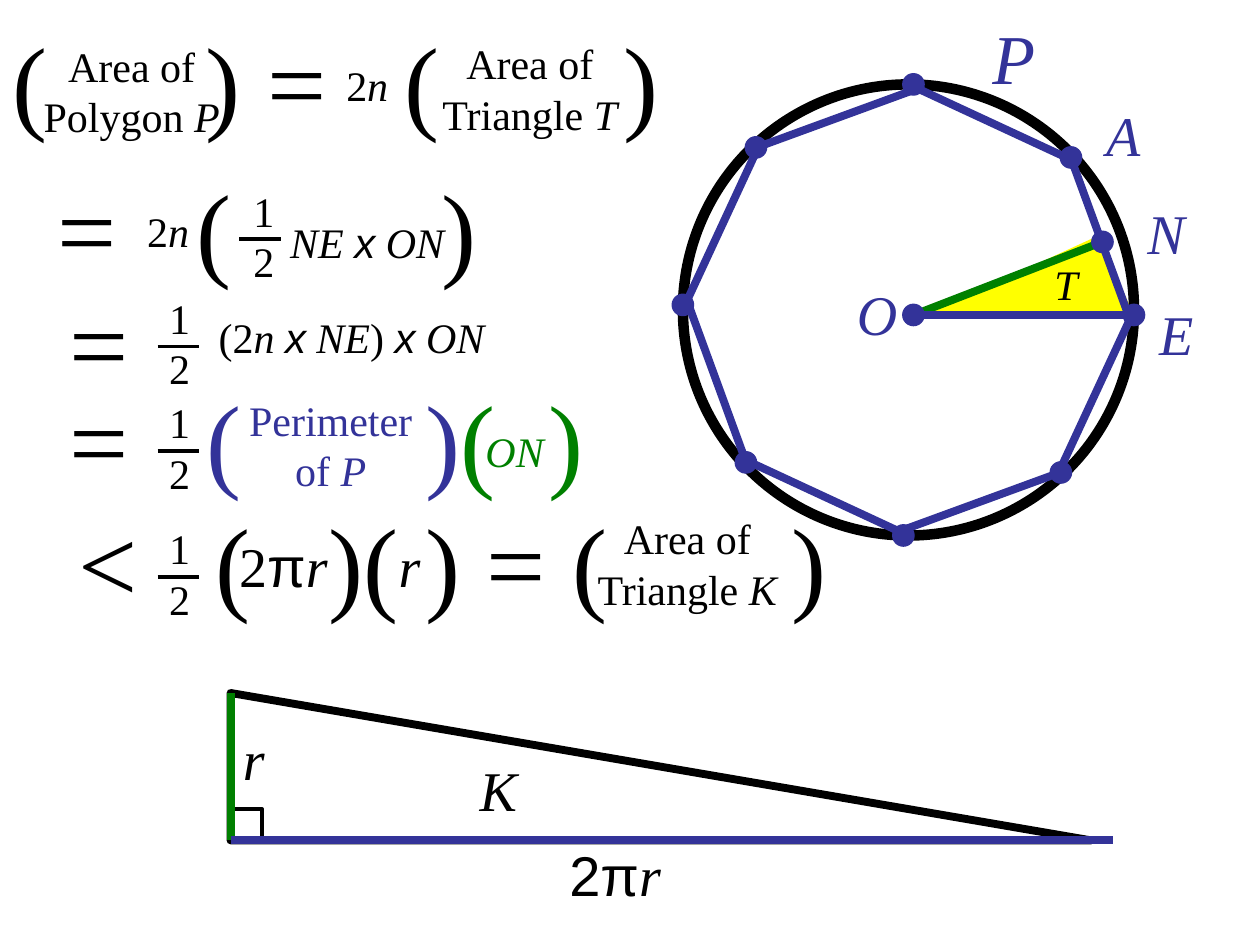
from dataclasses import dataclass

from lxml import etree
from pptx import Presentation
from pptx.dml.color import RGBColor
from pptx.enum.shapes import MSO_CONNECTOR, MSO_SHAPE
from pptx.enum.text import MSO_AUTO_SIZE, PP_ALIGN
from pptx.oxml.ns import qn
from pptx.util import Inches, Pt

STRAIGHT = MSO_CONNECTOR.STRAIGHT
OVAL, OCTAGON = MSO_SHAPE.OVAL, MSO_SHAPE.OCTAGON
RECTANGLE, RIGHT_TRIANGLE = MSO_SHAPE.RECTANGLE, MSO_SHAPE.RIGHT_TRIANGLE
LEFT, CENTER = PP_ALIGN.LEFT, PP_ALIGN.CENTER
FIT_SHAPE = MSO_AUTO_SIZE.SHAPE_TO_FIT_TEXT


@dataclass(frozen=True)
class Theme:
    black: RGBColor = RGBColor(0x00, 0x00, 0x00)
    blue: RGBColor = RGBColor(0x33, 0x33, 0x99)
    green: RGBColor = RGBColor(0x00, 0x80, 0x00)
    yellow: RGBColor = RGBColor(0xFF, 0xFF, 0x00)
    serif: str = "Times New Roman"
    sans: str = "Arial"
    body: int = 24
    label: int = 32
    heading: int = 40
    bracket: int = 60
    thin: float = 2.25
    thick: float = 4.5
    circle: float = 6


THEME = Theme()
ROMAN = {"name": THEME.serif, "italic": False}
ITALIC = {"name": THEME.serif, "italic": True}
SANS = {"name": THEME.sans, "italic": False}
SANS_ITALIC = {"name": THEME.sans, "italic": True}


class Page:
    """Holds the theme and the slide that the elements are added to."""

    def __init__(self, deck, theme):
        self.theme = theme
        self.slide = deck.slides.add_slide(deck.slide_layouts[6])

    def shape(self, kind, place, fill=None, line=None, width=0.75, turn=0):
        shape = self.slide.shapes.add_shape(kind, *map(Inches, place))
        shape.shadow.inherit = False
        shape.rotation = turn
        if fill is None:
            shape.fill.background()
        else:
            shape.fill.solid()
            shape.fill.fore_color.rgb = fill
        if line is None:
            shape.line.fill.background()
        else:
            shape.line.color.rgb = line
            shape.line.width = Pt(width)

    def dot(self, x, y, size=0.17):
        blue = self.theme.blue
        self.shape(OVAL, (x - size / 2, y - size / 2, size, size), blue, blue)

    def line(self, start, end, color, width):
        line = self.slide.shapes.add_connector(
            STRAIGHT, *map(Inches, (*start, *end)))
        line.line.color.rgb = color
        line.line.width = Pt(width)
        etree.SubElement(line._element.spPr, qn("a:effectLst"))

    def add_span(self, para, words, style, size, color):
        span = para.add_run()
        span.text = words
        for name, value in {"size": Pt(size), **style}.items():
            setattr(span.font, name, value)
        span.font.color.rgb = color

    def text(self, place, spans, size=None, color=None, align=CENTER):
        """Add a text box; each span is text, style and maybe its own colour."""
        box = self.slide.shapes.add_textbox(*map(Inches, place))
        frame = box.text_frame
        frame.word_wrap = True
        frame.auto_size = FIT_SHAPE
        para = frame.paragraphs[0]
        para.alignment = align
        for words, style, *own_color in spans:
            self.add_span(para, words, style, size or self.theme.body,
                          (own_color or [color or self.theme.black])[0])
        return box

    def signs(self, place, start, stops, spans):
        """Add large signs from x = start, with a tab stop at each x in stops."""
        box = self.text(place, spans, self.theme.bracket, align=LEFT)
        frame = box.text_frame
        frame.margin_left = Inches(start - place[0])
        frame.margin_right = 0
        props = frame.paragraphs[0]._p.get_or_add_pPr()
        tabs = etree.SubElement(props, qn("a:tabLst"))
        for stop in stops:
            etree.SubElement(tabs, qn("a:tab"),
                             pos=str(Inches(stop - start)), algn="l")

    def half(self, x, bar_y, box_x, box_y):
        """Add the fraction one half with its bar."""
        theme = self.theme
        box = self.text((box_x, box_y, 0.35, 0.9), [("1", ROMAN)])
        frame = box.text_frame
        frame.margin_left = frame.margin_right = 0
        para = frame.paragraphs[0]
        para.add_line_break()
        self.add_span(para, "2", ROMAN, theme.body, theme.black)
        self.line((x, bar_y), (x + 0.33, bar_y), theme.black, theme.thin)


def draw_polygon(page):
    theme = page.theme
    center_x, center_y, radius, side = 7.21, 2.46, 1.79, 3.25
    o_point, n_point, e_point = (7.25, 2.5), (8.75, 1.92), (9, 2.5)
    page.shape(RIGHT_TRIANGLE, (7.4, 2.16, 1.52, 0.66), theme.yellow, turn=155.3)
    page.line(o_point, n_point, theme.green, theme.thick)
    page.shape(OVAL, (center_x - radius, center_y - radius, 2 * radius, 2 * radius),
               line=theme.black, width=theme.circle)
    page.shape(OCTAGON, (center_x - side / 2, center_y - side / 2, side, side),
               line=theme.blue, width=theme.thick, turn=24.9)
    page.line(o_point, e_point, theme.blue, theme.thick)
    # Two neighbouring corners, turned by quarter turns, give all eight.
    for x, y in ((0.04, -1.79), (1.29, -1.21)):
        for _ in range(4):
            page.dot(center_x + x, center_y + y)
            x, y = -y, x
    page.dot(*n_point)
    page.dot(*o_point)
    for name, place in (("A", (8.33, 0.75, 1.17, 0.63)),
                        ("E", (8.75, 2.33, 1.17, 0.63)),
                        ("N", (8.67, 1.53, 1.17, 0.63)),
                        ("O", (6.5, 2.17, 0.92, 0.63))):
        page.text(place, [(name, ITALIC)], theme.label, theme.blue)
    page.text((7.67, 0.07, 0.75, 0.77), [("P", ITALIC)], theme.heading, theme.blue)
    page.text((8, 2, 0.92, 0.5), [("T", ITALIC)])


def draw_triangle(page):
    theme = page.theme
    left, top, bottom = 1.83, 5.5, 6.67
    page.shape(RIGHT_TRIANGLE, (left, top, 6.83, bottom - top),
               line=theme.black, width=theme.thick)
    page.shape(RECTANGLE, (left, bottom - 0.25, 0.25, 0.25),
               line=theme.black, width=theme.thin)
    page.line((left, bottom), (left, top), theme.green, theme.thick)
    page.line((left, bottom), (8.83, bottom), theme.blue, theme.thick)
    page.text((4.42, 6.62, 1.5, 0.63), [("2π", SANS), ("r", ITALIC)],
              theme.label, align=LEFT)
    page.text((left, 5.7, 1.5, 0.63), [("r", ITALIC)], theme.label, align=LEFT)
    page.text((3.58, 5.95, 0.75, 0.63), [("K", ITALIC)], theme.label)


def write_proof(page):
    theme = page.theme
    page.signs((-0.5, 0.08, 6.33, 1.1), 0.1, (1.63, 2.12, 3.21, 4.95),
               [("(\t)\t=\t(\t)", ROMAN)])
    page.signs((0.08, 1.25, 4.08, 1.1), 0.46, (1.56, 3.5), [("=\t(\t)", ROMAN)])
    page.text((0, 2.15, 1.58, 1.1), [("=", ROMAN)], theme.bracket)
    page.signs((-0.58, 2.92, 6.33, 1.1), 0.55, (1.64, 3.38, 4.35),
               [("=\t", ROMAN), ("(\t)", ROMAN, theme.blue),
                ("(\t)", ROMAN, theme.green)])
    page.signs((0.17, 3.9, 6.83, 1.1), 0.62,
               (1.71, 2.61, 3.38, 3.86, 4.54, 6.28),
               [("<\t(\t)(\t)\t=\t(\t)", ROMAN)])

    for words, name, x, y, color in (
            ("Area of Polygon ", "P", 0.17, 0.27, theme.black),
            ("Area of Triangle ", "T", 3.33, 0.25, theme.black),
            ("Perimeter of ", "P", 1.75, 3.08, theme.blue),
            ("Area of Triangle ", "K", 4.58, 4.02, theme.black)):
        page.text((x, y, 1.75, 0.9), [(words, ROMAN), (name, ITALIC)], color=color)
    for x, y in ((2.58, 0.42), (1, 1.58)):
        page.text((x, y, 0.67, 0.5), [("2", ROMAN), ("n", ITALIC)])

    times_on = [("x", SANS_ITALIC), (" ON", ITALIC)]
    page.text((1.83, 1.67, 2.17, 0.5), [("NE ", ITALIC), *times_on])
    page.text((1.58, 2.42, 2.42, 0.5),
              [("(2", ROMAN), ("n ", ITALIC), ("x", SANS_ITALIC),
               (" NE", ITALIC), (") ", ROMAN), *times_on])
    page.text((3, 3.33, 2.17, 0.5), [("ON", ITALIC)], color=theme.green)
    page.text((1.25, 4.17, 2, 0.63),
              [("2", ROMAN), ("π", SANS), ("r", ITALIC)], theme.label)
    page.text((3, 4.17, 0.5, 0.63), [("r", ITALIC)], theme.label)

    page.half(1.9, 1.9, 1.92, 1.42)
    for bar_y, box_y in ((2.75, 2.27), (3.58, 3.1), (4.58, 4.1)):
        page.half(1.25, bar_y, 1.25, box_y)


def main():
    deck = Presentation()
    deck.slide_width, deck.slide_height = Inches(10), Inches(7.5)
    page = Page(deck, THEME)
    draw_polygon(page)
    draw_triangle(page)
    write_proof(page)
    deck.save("out.pptx")


if __name__ == "__main__":
    main()
